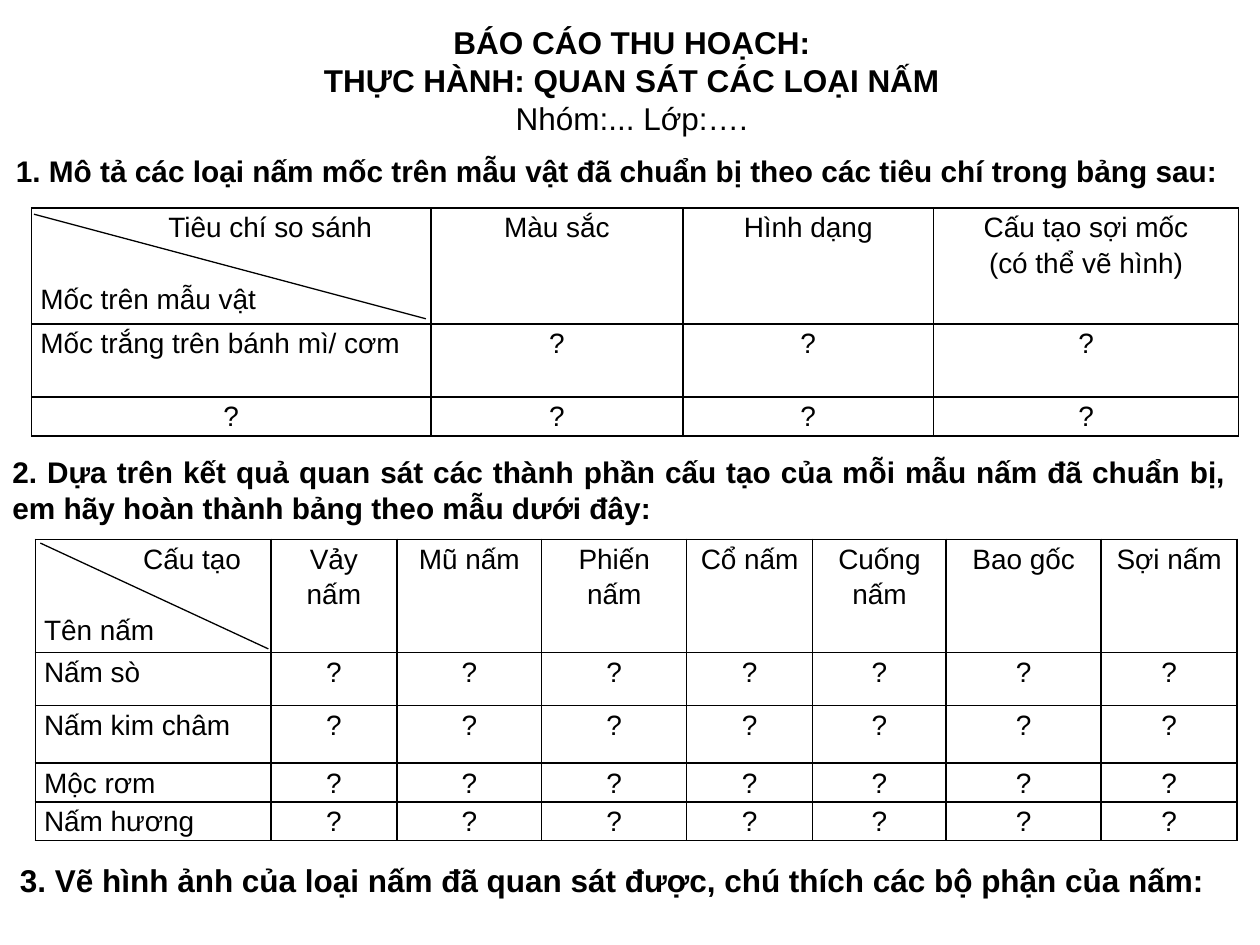
"""Build the mushroom observation report slide."""
import dataclasses
import typing

import lxml.etree
import pptx
import pptx.dml.color
import pptx.enum.shapes
import pptx.enum.text
import pptx.oxml.ns
import pptx.util

Inches, Pt = pptx.util.Inches, pptx.util.Pt
ALIGN = pptx.enum.text.PP_ALIGN
ANCHOR = pptx.enum.text.MSO_ANCHOR
qn = pptx.oxml.ns.qn
BLACK = "000000"


@dataclasses.dataclass
class Section:
    """A bold section heading."""
    text: str
    box: tuple
    size: int
    align: ALIGN = ALIGN.JUSTIFY
    anchor: ANCHOR = ANCHOR.MIDDLE
    wrap: bool = True


@dataclasses.dataclass
class Grid:
    """An observation table with a diagonally split corner cell."""
    left: float
    top: float
    widths: list
    heights: list
    corner: tuple
    headers: list
    labels: list
    diagonal: tuple


SECTIONS = [
    Section("1. Mô tả các loại nấm mốc trên mẫu vật đã chuẩn bị theo các tiêu chí trong bảng sau:",
            (-0.2, 1.16, 10.2, 0.39), 17, ALIGN.CENTER, ANCHOR.TOP),
    Section("2. Dựa trên kết quả quan sát các thành phần cấu tạo của mỗi mẫu nấm đã chuẩn bị, "
            "em hãy hoàn thành bảng theo mẫu dưới đây:", (0, 3.55, 9.83, 0.67), 17),
    Section("3. Vẽ hình ảnh của loại nấm đã quan sát được, chú thích các bộ phận của nấm:",
            (0.06, 6.78, 9.69, 0.4), 18, wrap=False),
]
GRIDS = [
    Grid(0.25, 1.65, [3.17, 2, 1.99, 2.42], [0.92, 0.58, 0.31],
         ("Tiêu chí so sánh", "Mốc trên mẫu vật"),
         ["Màu sắc", "Hình dạng", "Cấu tạo sợi mốc\n(có thể vẽ hình)"],
         ["Mốc trắng trên bánh mì/ cơm", "?"], (0.27, 1.7, 3.38, 2.53)),
    Grid(0.28, 4.28, [1.87, 1, 1.15, 1.15, 1, 1.06, 1.23, 1.08], [0.85, 0.42, 0.46, 0.28, 0.28],
         ("Cấu tạo", "Tên nấm"),
         ["Vảy nấm", "Mũ nấm", "Phiến nấm", "Cổ nấm", "Cuống nấm", "Bao gốc", "Sợi nấm"],
         ["Nấm sò", "Nấm kim châm", "Mộc rơm", "Nấm hương"], (0.32, 4.31, 2.13, 5.15)),
]


def rgb(value: str) -> pptx.dml.color.RGBColor:
    """Turn a hex string into a colour."""
    return pptx.dml.color.RGBColor.from_string(value)


def format_text(tf: typing.Any, size: int, bold: bool, align: ALIGN) -> None:
    """Apply one font and alignment to a text frame."""
    for p in tf.paragraphs:
        p.alignment = align
        for r in p.runs:
            r.font.name, r.font.size, r.font.bold = "Arial", Pt(size), bold
            r.font.color.rgb = rgb(BLACK)


def add_title(s: typing.Any) -> None:
    """Fill the title placeholder."""
    sp = s.shapes.title
    sp.left, sp.top, sp.width, sp.height = map(Inches, (2.25, 0.13, 5.53, 1.01))
    tf = sp.text_frame
    tf.text = "BÁO CÁO THU HOẠCH:\nTHỰC HÀNH: QUAN SÁT CÁC LOẠI NẤM\nNhóm:... Lớp:…."
    tf.word_wrap, tf.vertical_anchor = True, ANCHOR.MIDDLE
    tf.auto_size = pptx.enum.text.MSO_AUTO_SIZE.SHAPE_TO_FIT_TEXT
    format_text(tf, 18, True, ALIGN.CENTER)
    tf.paragraphs[-1].runs[0].font.bold = False


def add_section(s: typing.Any, section: Section) -> None:
    """Add a section heading."""
    tf = s.shapes.add_textbox(*map(Inches, section.box)).text_frame
    tf.text = section.text
    tf.word_wrap, tf.vertical_anchor = section.wrap, section.anchor
    tf.auto_size = pptx.enum.text.MSO_AUTO_SIZE.SHAPE_TO_FIT_TEXT
    format_text(tf, section.size, True, section.align)


def add_borders(cell: typing.Any) -> None:
    """Draw a thin line on each side of a cell."""
    tc_pr = cell._tc.get_or_add_tcPr()
    for i, side in enumerate(("a:lnL", "a:lnR", "a:lnT", "a:lnB")):
        ln = lxml.etree.Element(qn(side), w=str(Pt(1)))
        fill = lxml.etree.SubElement(ln, qn("a:solidFill"))
        lxml.etree.SubElement(fill, qn("a:srgbClr"), val=BLACK)
        tc_pr.insert(i, ln)


def fill_cell(cell: typing.Any, text: str, align: ALIGN) -> None:
    """Write and format one cell."""
    cell.text_frame.text = text
    cell.margin_left = cell.margin_right = Inches(0.07)
    cell.margin_top = cell.margin_bottom = 0
    cell.fill.background()
    add_borders(cell)
    format_text(cell.text_frame, 16, False, align)
    for p in cell.text_frame.paragraphs:
        p.line_spacing = 1.15


def add_line(s: typing.Any, ends: tuple) -> None:
    """Add a diagonal divider."""
    line = s.shapes.add_connector(pptx.enum.shapes.MSO_CONNECTOR.STRAIGHT, *map(Inches, ends))
    line.line.color.rgb, line.line.width = rgb(BLACK), Pt(0.75)
    lxml.etree.SubElement(line._element.spPr, qn("a:effectLst"))


def add_grid(s: typing.Any, grid: Grid) -> None:
    """Add an observation table and its divider."""
    blanks = ["?"] * len(grid.headers)
    rows = [["\n".join(grid.corner), *grid.headers]] + [[label, *blanks] for label in grid.labels]
    size = Inches(sum(grid.widths)), Inches(sum(grid.heights))
    table = s.shapes.add_table(len(rows), len(grid.widths),
                               Inches(grid.left), Inches(grid.top), *size).table
    table.first_row = table.horz_banding = False
    for column, width in zip(table.columns, grid.widths):
        column.width = Inches(width)
    for row, height, texts in zip(table.rows, grid.heights, rows):
        row.height = Inches(height)
        for i, (cell, text) in enumerate(zip(row.cells, texts)):
            is_label = i == 0 and text != "?"
            fill_cell(cell, text, ALIGN.JUSTIFY if is_label else ALIGN.CENTER)
    upper, lower = table.cell(0, 0).text_frame.paragraphs
    upper.alignment = ALIGN.CENTER
    upper._p.get_or_add_pPr().set("marL", str(Inches(0.62)))
    lower.space_before = Pt(20.5)
    add_line(s, grid.diagonal)


def main() -> None:
    """Build and save the slide."""
    prs = pptx.Presentation()
    prs.slide_width, prs.slide_height = Inches(10), Inches(7.5)
    s = prs.slides.add_slide(prs.slide_layouts[5])
    add_title(s)
    for section in SECTIONS:
        add_section(s, section)
    for grid in GRIDS:
        add_grid(s, grid)
    prs.save("out.pptx")


if __name__ == "__main__":
    main()
